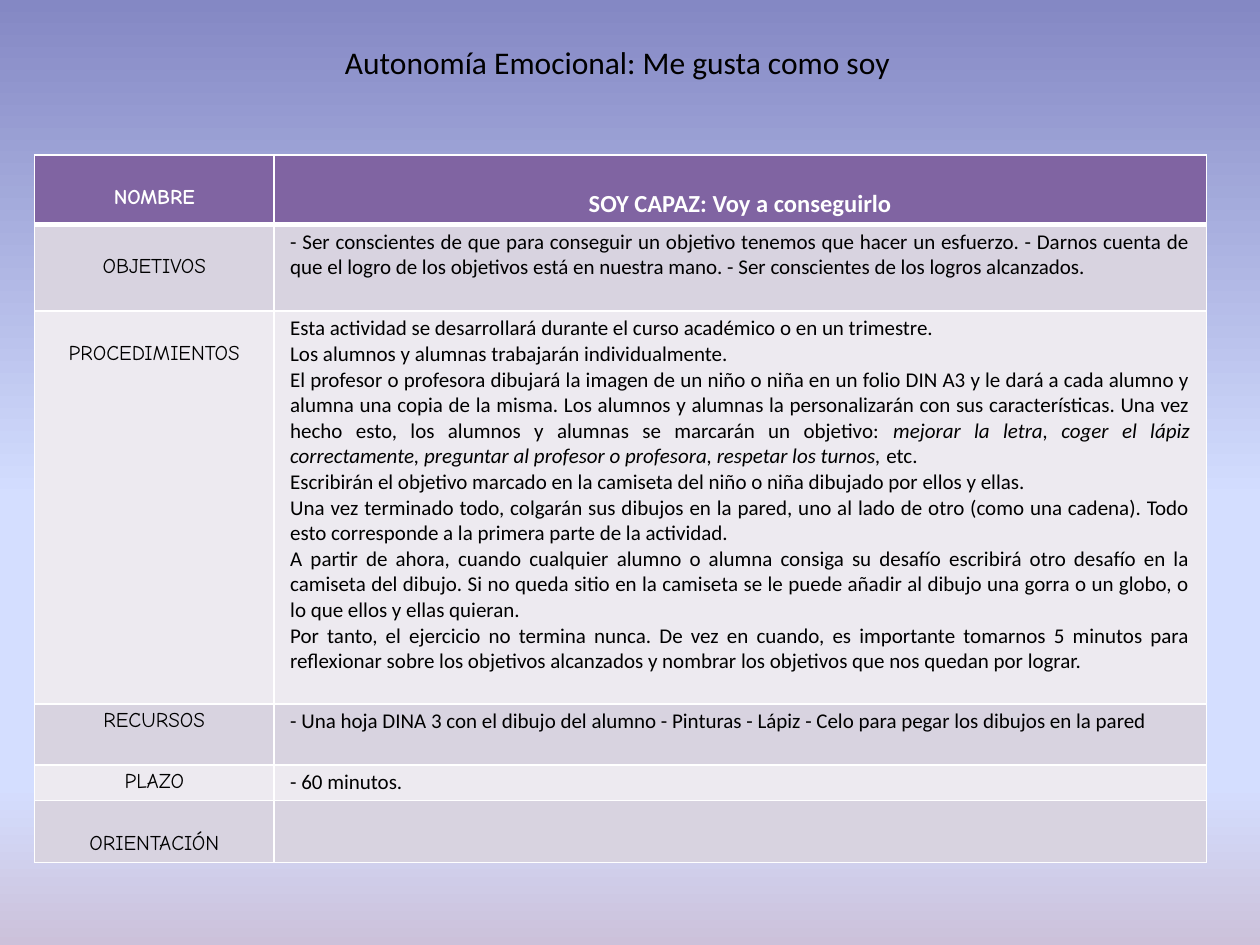
import pptx
import pptx.util
import pptx.dml.color
import pptx.enum.text
import pptx.oxml
import pptx.oxml.ns
import copy

Cm, Pt = pptx.util.Cm, pptx.util.Pt
ALIGN = pptx.enum.text.PP_ALIGN
ANCHOR = pptx.enum.text.MSO_ANCHOR
qn = pptx.oxml.ns.qn

COLORS = {"header": "8064A2", "dark": "D8D3E0", "light": "EDEAF0",
          "line": "FFFFFF", "white": "FFFFFF", "text": "000000"}
BACKGROUND = [(0, "8488C4"), (53, "D4DEFF"), (83, "D4DEFF"), (100, "CCC1DA")]
COLUMNS = [4.82, 18.8]

PROCEDURE = [
    "Esta actividad se desarrollará durante el curso académico o en un trimestre.",
    "Los alumnos y alumnas trabajarán individualmente.",
    [("El profesor o profesora dibujará la imagen de un niño o niña en un folio DIN A3 y le dará "
      "a cada alumno y alumna una copia de la misma. Los alumnos y alumnas la personalizarán con "
      "sus características. Una vez hecho esto, los alumnos y alumnas se marcarán un objetivo: ", False),
     ("mejorar la letra, coger el lápiz correctamente, preguntar al profesor o profesora, "
      "respetar los turnos, ", True),
     ("etc.", False)],
    "Escribirán el objetivo marcado en la camiseta del niño o niña dibujado por ellos y ellas.",
    "Una vez terminado todo, colgarán sus dibujos en la pared, uno al lado de otro (como una "
    "cadena). Todo esto corresponde a la primera parte de la actividad.",
    "A partir de ahora, cuando cualquier alumno o alumna consiga su desafío escribirá otro desafío "
    "en la camiseta del dibujo. Si no queda sitio en la camiseta se le puede añadir al dibujo una "
    "gorra o un globo, o lo que ellos y ellas quieran.",
    "Por tanto, el ejercicio no termina nunca. De vez en cuando, es importante tomarnos 5 minutos "
    "para reflexionar sobre los objetivos alcanzados y nombrar los objetivos que nos quedan por lograr.",
]
# label, paragraphs, row height, top margin of the label
ROWS = [
    ("NOMBRE", ["SOY CAPAZ: Voy a conseguirlo"], 1.37, 0.62),
    ("OBJETIVOS", ["- Ser conscientes de que para conseguir un objetivo tenemos que hacer un esfuerzo. "
                   "- Darnos cuenta de que el logro de los objetivos está en nuestra mano. "
                   "- Ser conscientes de los logros alcanzados."], 1.75, 0.62),
    ("PROCEDIMIENTOS", PROCEDURE, 7.92, 0.62),
    ("RECURSOS", ["- Una hoja DINA 3 con el dibujo del alumno - Pinturas - Lápiz "
                  "- Celo para pegar los dibujos en la pared"], 1.23, 0.1),
    ("PLAZO", ["- 60 minutos."], 0.7, 0.1),
    ("ORIENTACIÓN", [], 1.25, 0.62),
]


def write(p, text, font="Calibri", size=12, color="text", bold=False, italic=False, align=None):
    p.alignment = align
    r = p.add_run()
    r.text = text
    r.font.name, r.font.size = font, Pt(size)
    r.font.bold, r.font.italic = bold, italic
    r.font.color.rgb = pptx.dml.color.RGBColor.from_string(COLORS[color])


class Deck:
    def __init__(self, prs):
        self.prs = prs
        self.s = prs.slides.add_slide(prs.slide_layouts[5])

    def background(self, stops):
        fill = self.s.background.fill
        fill.gradient()
        fill.gradient_angle = 270
        gs_list = self.s._element.find(".//" + qn("a:gsLst"))
        for _ in range(len(stops) - len(gs_list)):
            gs_list.append(copy.deepcopy(gs_list[0]))
        for stop, (position, color) in zip(fill.gradient_stops, stops):
            stop.position = position / 100
            stop.color.rgb = pptx.dml.color.RGBColor.from_string(color)

    def title(self, text, left, top, width, height):
        sp = self.s.shapes.title
        sp.left, sp.top, sp.width, sp.height = Cm(left), Cm(top), Cm(width), Cm(height)
        tf = sp.text_frame
        tf.word_wrap = True
        tf.auto_size = pptx.enum.text.MSO_AUTO_SIZE.NONE
        tf.vertical_anchor = ANCHOR.TOP
        write(tf.paragraphs[0], text, size=18, align=ALIGN.LEFT)

    def borders(self, cell, top, bottom):
        tc_pr = cell._tc.get_or_add_tcPr()
        for i, (side, width) in enumerate(zip("LRTB", (1, 1, top, bottom))):
            tc_pr.insert(i, pptx.oxml.parse_xml(
                f'<a:ln{side} {pptx.oxml.ns.nsdecls("a")} w="{Pt(width)}"><a:solidFill>'
                f'<a:srgbClr val="{COLORS["line"]}"/></a:solidFill></a:ln{side}>'))

    def cell(self, cell, paragraphs, fill, margin_top=0.1, **fmt):
        cell.fill.solid()
        cell.fill.fore_color.rgb = pptx.dml.color.RGBColor.from_string(COLORS[fill])
        cell.margin_left = cell.margin_right = Cm(0.33)
        cell.margin_top, cell.margin_bottom = Cm(margin_top), Cm(0.1)
        cell.vertical_anchor = ANCHOR.TOP
        tf = cell.text_frame
        for i, content in enumerate(paragraphs):
            p = tf.add_paragraph() if i else tf.paragraphs[0]
            parts = [(content, False)] if isinstance(content, str) else content
            for text, italic in parts:
                write(p, text, italic=italic, **fmt)

    def table(self, rows, columns, left, top):
        height = sum(row[2] for row in rows)
        tbl = self.s.shapes.add_table(len(rows), len(columns), Cm(left), Cm(top),
                                      Cm(sum(columns)), Cm(height)).table
        for column, width in zip(tbl.columns, columns):
            column.width = Cm(width)
        for i, (label, body, row_height, label_top) in enumerate(rows):
            tbl.rows[i].height = Cm(row_height)
            header = i == 0
            fill = "header" if header else ("light", "dark")[i % 2]
            fmt = {"color": "white" if header else "text", "bold": header}
            self.cell(tbl.cell(i, 0), [label], fill, label_top,
                      font="Comic Neue", align=ALIGN.CENTER, **fmt)
            self.cell(tbl.cell(i, 1), body, fill, 0.7 if header else 0.1,
                      size=14 if header else 12,
                      align=ALIGN.CENTER if header else ALIGN.JUSTIFY, **fmt)
            for cell in tbl.rows[i].cells:
                self.borders(cell, 3 if i == 1 else 1, 3 if header else 1)


def main():
    prs = pptx.Presentation()
    prs.slide_width, prs.slide_height = Cm(25.4), Cm(19.05)
    deck = Deck(prs)
    deck.background(BACKGROUND)
    deck.table(ROWS, COLUMNS, 0.7, 3.12)
    deck.title("Autonomía Emocional: Me gusta como soy", 6.7, 0.74, 12.4, 1.02)
    prs.save("out.pptx")


if __name__ == "__main__":
    main()
